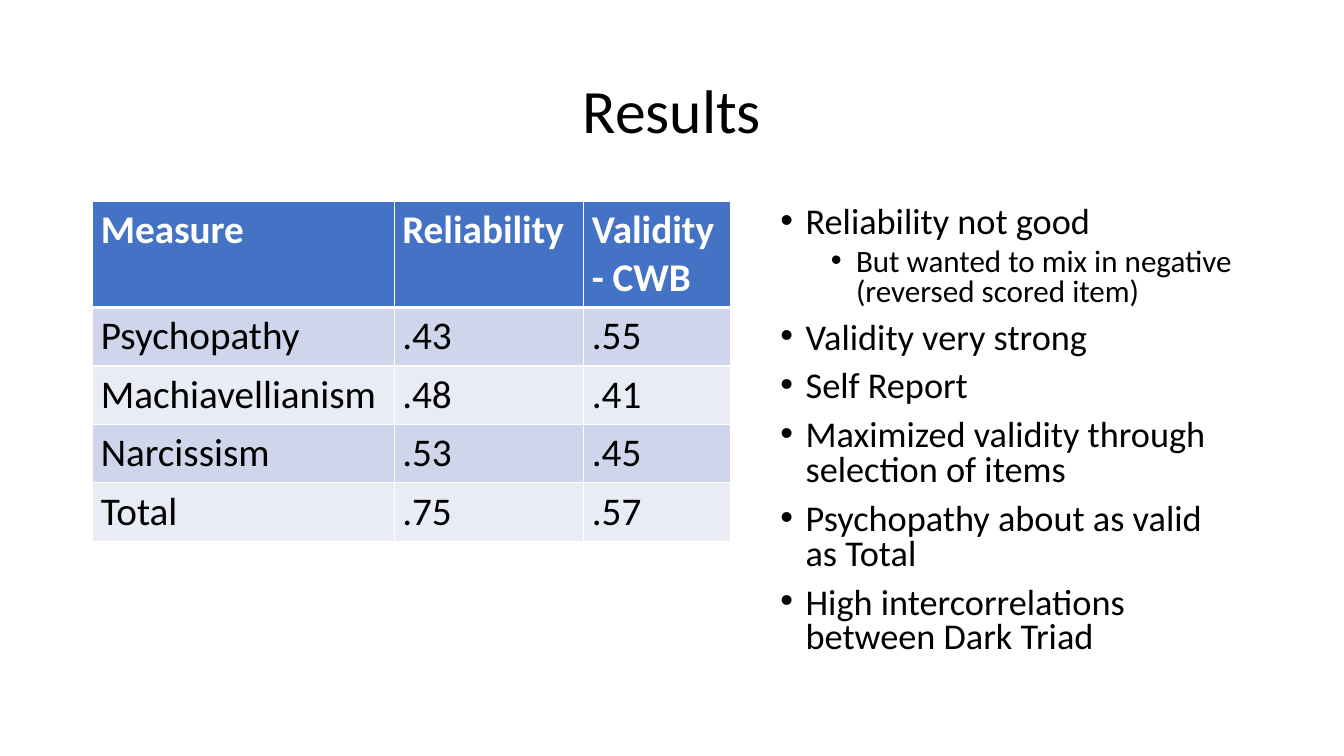
from lxml import etree
from pptx import Presentation
from pptx.dml.color import RGBColor
from pptx.enum.text import MSO_ANCHOR, MSO_AUTO_SIZE, PP_ALIGN
from pptx.oxml.ns import qn
from pptx.util import Inches, Pt

CENTER = PP_ALIGN.CENTER
MIDDLE = MSO_ANCHOR.MIDDLE
TOP = MSO_ANCHOR.TOP
NO_AUTOFIT = MSO_AUTO_SIZE.NONE

WIDTH, HEIGHT = 13.33, 7.5
MARGIN = 0.92
CONTENT_TOP = 2
LIST_LEFT = 7.64
COLUMN_WIDTHS = (2.99, 1.88, 1.46)
HEADER_HEIGHT, ROW_HEIGHT = 1.05, 0.58

FONT = "Calibri"
BLACK, WHITE = "000000", "FFFFFF"
HEADER_FILL = "4472C4"
BAND_FILLS = ("CFD5EA", "E9EBF5")

MEASURES = (
    ("Measure", "Reliability", "Validity - CWB"),
    ("Psychopathy", ".43", ".55"),
    ("Machiavellianism", ".48", ".41"),
    ("Narcissism", ".53", ".45"),
    ("Total", ".75", ".57"),
)

FINDINGS = (
    (0, "Reliability not good"),
    (1, "But wanted to mix in negative (reversed scored item)"),
    (0, "Validity very strong"),
    (0, "Self Report"),
    (0, "Maximized validity through selection of items"),
    (0, "Psychopathy about as valid as Total"),
    (0, "High intercorrelations between Dark Triad"),
)

LEVEL_STYLES = ((25.9, 10, 0.25), (22.2, 5, 0.75))


def color(value):
    return RGBColor.from_string(value)


def place(shape, left, top, width, height):
    shape.left, shape.top = Inches(left), Inches(top)
    shape.width, shape.height = Inches(width), Inches(height)


def add_span(para, text, size, ink=BLACK, bold=False):
    span = para.add_run()
    span.text = text
    span.font.name = FONT
    span.font.size = Pt(size)
    span.font.bold = bold
    span.font.color.rgb = color(ink)


def set_bullet(para, indent):
    properties = para._p.get_or_add_pPr()
    properties.set("marL", str(Inches(indent)))
    properties.set("indent", str(-Inches(0.25)))
    etree.SubElement(properties, qn("a:buFont"), typeface="Arial")
    etree.SubElement(properties, qn("a:buChar"), char="•")


def set_borders(cell, bottom):
    properties = cell._tc.get_or_add_tcPr()
    for side, points in (("L", 1), ("R", 1), ("T", 1), ("B", bottom)):
        line = etree.SubElement(properties, qn(f"a:ln{side}"), w=str(Pt(points)))
        fill = etree.SubElement(line, qn("a:solidFill"))
        etree.SubElement(fill, qn("a:srgbClr"), val=WHITE)


def fill_title(title, text):
    place(title, MARGIN, 0.4, WIDTH - 2 * MARGIN, 1.45)
    frame = title.text_frame
    frame.auto_size = NO_AUTOFIT
    frame.vertical_anchor = MIDDLE
    para = frame.paragraphs[0]
    para.alignment = CENTER
    para.line_spacing = 0.9
    add_span(para, text, 44)


def fill_list(body, items):
    place(body, LIST_LEFT, CONTENT_TOP, WIDTH - MARGIN - LIST_LEFT, 4.76)
    frame = body.text_frame
    frame.auto_size = NO_AUTOFIT
    frame.vertical_anchor = TOP
    for index, (level, text) in enumerate(items):
        size, space, indent = LEVEL_STYLES[level]
        para = frame.add_paragraph() if index else frame.paragraphs[0]
        para.level = level
        para.line_spacing = 0.8
        para.space_before = Pt(space)
        set_bullet(para, indent)
        add_span(para, text, size)


def fill_cell(cell, text, row):
    header = row == 0
    cell.margin_left = cell.margin_right = Inches(0.08)
    cell.margin_top = cell.margin_bottom = Inches(0.05)
    set_borders(cell, 3 if header else 1)
    cell.fill.solid()
    cell.fill.fore_color.rgb = color(HEADER_FILL if header else BAND_FILLS[(row - 1) % 2])
    add_span(cell.text_frame.paragraphs[0], text, 28, WHITE if header else BLACK, header)


def add_measures(page, rows):
    heights = [HEADER_HEIGHT] + [ROW_HEIGHT] * (len(rows) - 1)
    table = page.shapes.add_table(
        len(rows), len(COLUMN_WIDTHS), Inches(MARGIN), Inches(CONTENT_TOP),
        Inches(sum(COLUMN_WIDTHS)), Inches(sum(heights))).table
    for column, width in zip(table.columns, COLUMN_WIDTHS):
        column.width = Inches(width)
    for row, (height, texts) in enumerate(zip(heights, rows)):
        table.rows[row].height = Inches(height)
        for column, text in enumerate(texts):
            fill_cell(table.cell(row, column), text, row)


def main():
    deck = Presentation()
    deck.slide_width, deck.slide_height = Inches(WIDTH), Inches(HEIGHT)
    page = deck.slides.add_slide(deck.slide_layouts[1])
    fill_title(page.shapes.title, "Results")
    add_measures(page, MEASURES)
    fill_list(page.placeholders[1], FINDINGS)
    deck.save("out.pptx")


if __name__ == "__main__":
    main()
